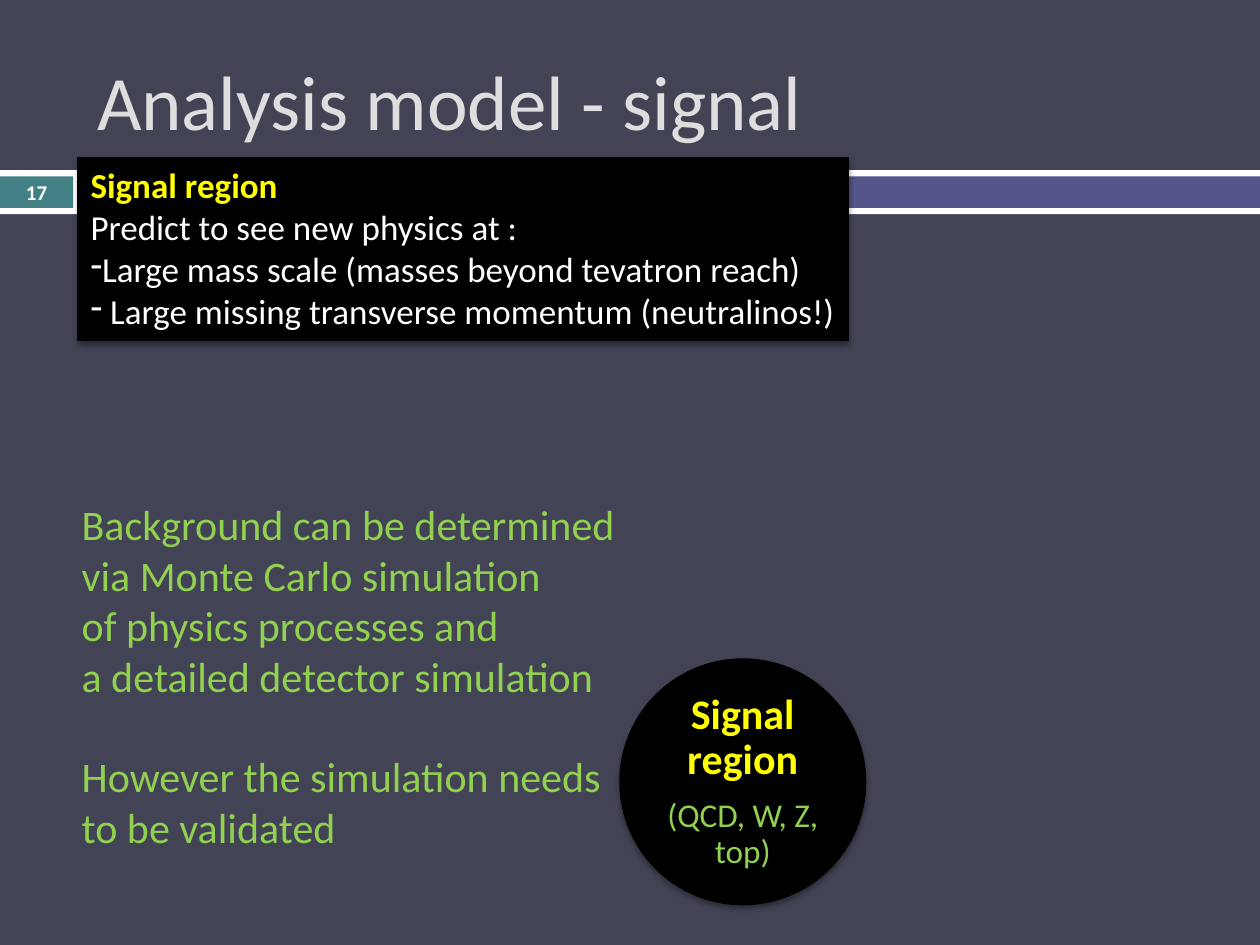
from dataclasses import dataclass

from lxml.etree import SubElement
from pptx import Presentation
from pptx.dml.color import RGBColor
from pptx.enum.shapes import MSO_SHAPE
from pptx.enum.text import MSO_ANCHOR, MSO_AUTO_SIZE, PP_ALIGN
from pptx.oxml import parse_xml
from pptx.oxml.ns import nsdecls, qn
from pptx.util import Inches, Pt


@dataclass(frozen=True)
class Theme:
    font: str = "Calibri"
    background: str = "424456"
    white: str = "FFFFFF"
    teal: str = "438086"
    violet: str = "53548A"
    title: str = "DEDEDE"
    black: str = "000000"
    yellow: str = "FFFF00"
    green: str = "92D050"
    title_size: float = 44
    large_size: float = 24
    region_size: float = 20
    process_size: float = 19
    number_size: float = 12


theme = Theme()
SHADOW = (
    f'<a:effectLst {nsdecls("a")}><a:outerShdw blurRad="{Pt(3.1)}" dist="{Pt(1.8)}" '
    f'dir="5400000" rotWithShape="0"><a:srgbClr val="{theme.black}">'
    '<a:alpha val="35000"/></a:srgbClr></a:outerShdw></a:effectLst>'
)

presentation = Presentation()
presentation.slide_width, presentation.slide_height = Inches(10), Inches(7.5)
column = presentation.slide_width / 100
row = presentation.slide_height / 75


def grid(left, top, width, height):
    """Turn grid columns and rows into slide lengths."""
    return [round(n * unit) for n, unit in zip((left, top, width, height), (column, row) * 2)]


def add_run(paragraph, text, size, color, bold=False):
    run = paragraph.add_run()
    run.text = text
    run.font.name = theme.font
    run.font.size = Pt(size)
    run.font.bold = bold
    run.font.color.rgb = RGBColor.from_string(color)


slide = presentation.slides.add_slide(presentation.slide_layouts[5])
slide.background.fill.solid()
slide.background.fill.fore_color.rgb = RGBColor.from_string(theme.background)

# Title
title = slide.shapes.title
title.left, title.top, title.width, title.height = grid(6.7, 2.5, 89.2, 10.8)
title.text_frame.auto_size = MSO_AUTO_SIZE.NONE
title.text_frame.vertical_anchor = MSO_ANCHOR.MIDDLE
title_paragraph = title.text_frame.paragraphs[0]
title_paragraph.alignment = PP_ALIGN.LEFT
add_run(title_paragraph, "Analysis model - signal", theme.title_size, theme.title)

# Band below the title, with the slide number
for cells, color in (
    ((0, 13.5, 100, 3.5), theme.white),
    ((0, 14, 5.8, 2.5), theme.teal),
    ((6.5, 14, 93.5, 2.5), theme.violet),
):
    band = slide.shapes.add_shape(MSO_SHAPE.RECTANGLE, *grid(*cells))
    band.shadow.inherit = False
    band.fill.solid()
    band.fill.fore_color.rgb = RGBColor.from_string(color)
    band.line.fill.background()

number = slide.shapes.add_textbox(*grid(0, 13.9, 5.8, 2.7))
number.text_frame.word_wrap = True
number.text_frame.vertical_anchor = MSO_ANCHOR.MIDDLE
number_paragraph = number.text_frame.paragraphs[0]
number_paragraph.alignment = PP_ALIGN.CENTER
add_run(number_paragraph, "17", theme.number_size, theme.white, bold=True)

# Black panel and black circle
panel = slide.shapes.add_shape(MSO_SHAPE.RECTANGLE, *grid(6.2, 12.5, 61.1, 14.5))
region = slide.shapes.add_group_shape()
circle = region.shapes.add_shape(MSO_SHAPE.OVAL, *grid(49.2, 52.3, 19.5, 19.5))
for shape in (panel, circle):
    shape.fill.solid()
    shape.fill.fore_color.rgb = RGBColor.from_string(theme.black)
    shape.line.color.rgb = RGBColor.from_string(theme.black)
    shape.line.width = Pt(0.75)
    shape._element.spPr.append(parse_xml(SHADOW))

# Signal region predictions
frame = panel.text_frame
frame.word_wrap = True
frame.vertical_anchor = MSO_ANCHOR.TOP
for index, (text, color, bulleted) in enumerate((
    ("Signal region", theme.yellow, False),
    ("Predict to see new physics at :", theme.white, False),
    ("Large mass scale (masses beyond tevatron reach)", theme.white, True),
    (" Large missing transverse momentum (neutralinos!)", theme.white, True),
)):
    paragraph = frame.add_paragraph() if index else frame.paragraphs[0]
    paragraph.alignment = PP_ALIGN.LEFT
    if bulleted:
        SubElement(paragraph._p.get_or_add_pPr(), qn("a:buChar")).set("char", "-")
    add_run(paragraph, text, theme.region_size, color, bold=index == 0)

# Label in the circle
label = region.shapes.add_textbox(*grid(52.1, 55.2, 13.7, 13.7))
frame = label.text_frame
frame.word_wrap = True
frame.vertical_anchor = MSO_ANCHOR.MIDDLE
frame.margin_left = frame.margin_right = frame.margin_top = frame.margin_bottom = Inches(0.02)
for index, (text, size, color) in enumerate((
    ("Signal region", theme.large_size, theme.yellow),
    ("(QCD, W, Z, top)", theme.process_size, theme.green),
)):
    paragraph = frame.add_paragraph() if index else frame.paragraphs[0]
    paragraph.alignment = PP_ALIGN.CENTER
    paragraph.line_spacing = 0.9
    paragraph.space_after = Pt(0.35 * size)
    add_run(paragraph, text, size, color, bold=index == 0)

# Background estimate, with a one-line gap before the caveat
estimate = slide.shapes.add_textbox(*grid(5.5, 39.1, 44.7, 29.3))
frame = estimate.text_frame
frame.word_wrap = False
for index, text in enumerate((
    "Background can be determined",
    "via Monte Carlo simulation",
    "of physics processes and",
    "a detailed detector simulation",
    "However the simulation needs",
    "to be validated",
)):
    paragraph = frame.add_paragraph() if index else frame.paragraphs[0]
    if text.startswith("However"):
        paragraph.space_before = Pt(1.2 * theme.large_size)
    add_run(paragraph, text, theme.large_size, theme.green)

presentation.save("out.pptx")
